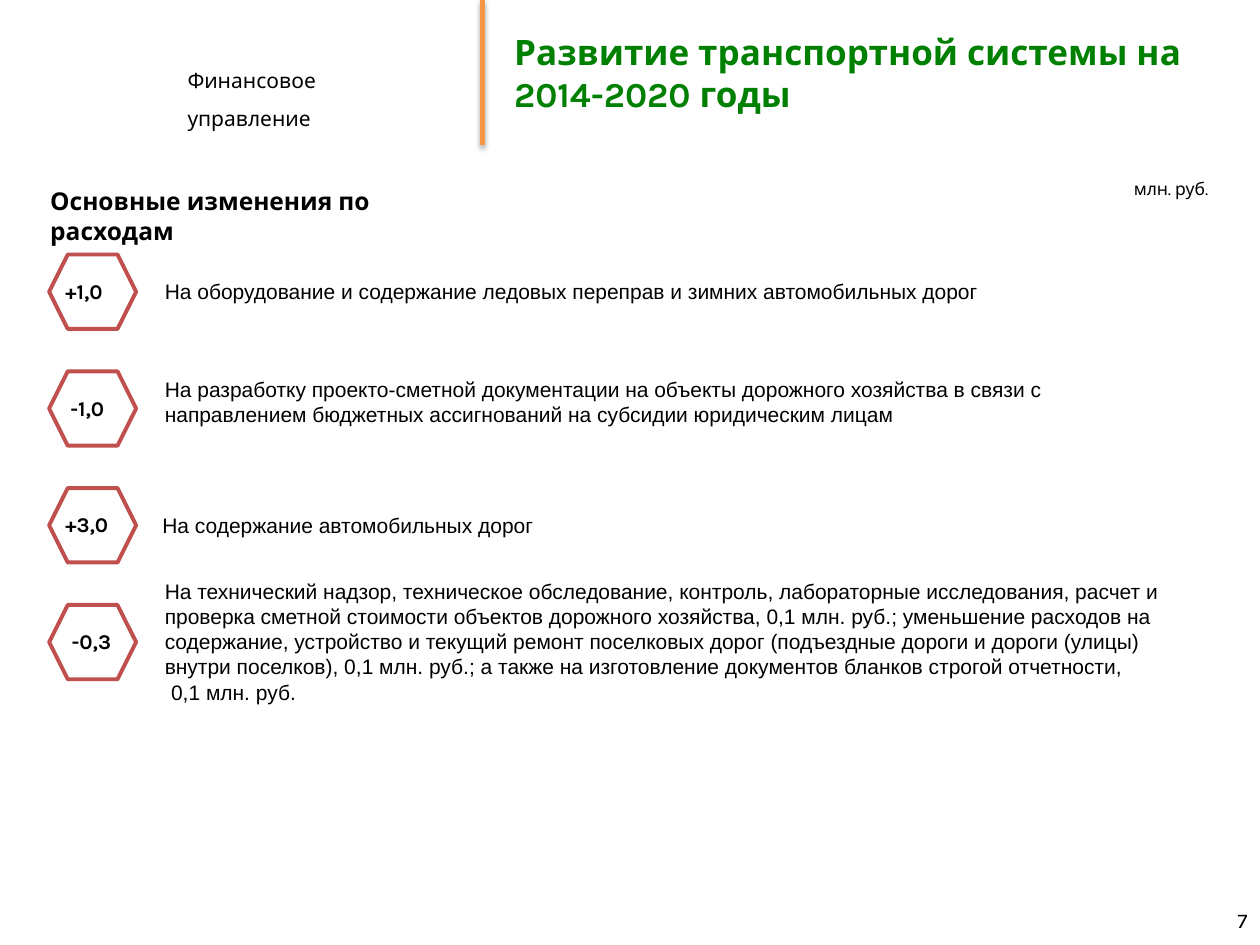
import pptx
import pptx.util
import pptx.dml.color
import pptx.enum.shapes
import pptx.enum.text
import pptx.oxml
from pptx.util import Inches, Pt

TITLE = "Развитие транспортной системы на 2014-2020 годы"
DEPARTMENT = "Финансовое управление"
HEADING = "Основные изменения по расходам"
UNIT = "млн. руб."
PAGE = "7"
CHANGES = [
    {"value": "+1,0", "value_left": 0.42, "left": 1.21, "top": 2.16, "height": 0.3,
     "text": ["На оборудование и содержание ледовых переправ и зимних автомобильных дорог"]},
    {"value": "-1,0", "value_left": 0.46, "left": 1.21, "top": 2.94, "height": 0.5,
     "text": ["На разработку проекто-сметной документации на объекты дорожного хозяйства "
              "в связи с направлением бюджетных ассигнований на субсидии юридическим лицам"]},
    {"value": "+3,0", "value_left": 0.42, "left": 1.19, "top": 4.02, "height": 0.3,
     "text": ["На содержание автомобильных дорог"]},
    {"value": "-0,3", "value_left": 0.47, "left": 1.21, "top": 4.54, "height": 1.11,
     "text": ["На технический надзор, техническое обследование, контроль, лабораторные "
              "исследования, расчет и проверка сметной стоимости объектов дорожного хозяйства, "
              "0,1 млн. руб.; уменьшение расходов на содержание, устройство и текущий ремонт "
              "поселковых дорог (подъездные дороги и дороги (улицы) внутри поселков), "
              "0,1 млн. руб.; а также на изготовление документов бланков строгой отчетности,",
              "0,1 млн. руб."]},
]

THEME = {
    "head_font": "Karla", "body_font": "Arial",
    "title": "008000", "text": "000000", "rule": "F79646", "hexagon": "C0504D",
    "title_size": 20, "heading_size": 14, "body_size": 12, "unit_size": 10,
}
ROW_TOP, ROW_STEP = 2.02, 0.927
HEX_LEFT, HEX_W, HEX_H = 0.39, 0.69, 0.59
VALUE_OFFSET = 0.14
LAST_LINE_INDENT = 0.05
SHADOW = (
    '<a:effectLst xmlns:a="http://schemas.openxmlformats.org/drawingml/2006/main">'
    '<a:outerShdw blurRad="40000" dist="23000" dir="5400000" rotWithShape="0">'
    '<a:srgbClr val="000000"><a:alpha val="35000"/></a:srgbClr>'
    '</a:outerShdw></a:effectLst>'
)


def rgb(name):
    return pptx.dml.color.RGBColor.from_string(THEME[name])


def format_text(tf, size, font="head_font", color="text", bold=False):
    for p in tf.paragraphs:
        for r in p.runs:
            r.font.name = THEME[font]
            r.font.size = Pt(THEME[size])
            r.font.bold = bold
            r.font.color.rgb = rgb(color)


def add_text(s, box, text, size, wrap=True, **style):
    tf = s.shapes.add_textbox(*map(Inches, box)).text_frame
    tf.word_wrap = wrap
    tf.text = text
    format_text(tf, size, **style)
    return tf


def add_header(s):
    tf = add_text(s, (1.39, 0.39, 2.1, 0.36), DEPARTMENT, "body_size")
    tf.paragraphs[0].line_spacing = 1.5

    rule = s.shapes.add_connector(pptx.enum.shapes.MSO_CONNECTOR.STRAIGHT,
                                  Inches(3.83), Inches(0), Inches(3.83), Inches(1.15))
    rule.line.color.rgb = rgb("rule")
    rule.line.width = Pt(3)
    rule._element.spPr.append(pptx.oxml.parse_xml(SHADOW))

    title = s.shapes.title
    title.left, title.top, title.width, title.height = map(Inches, (3.98, 0, 6.02, 1.15))
    tf = title.text_frame
    tf.text = TITLE
    tf.word_wrap = True
    tf.auto_size = pptx.enum.text.MSO_AUTO_SIZE.NONE
    tf.vertical_anchor = pptx.enum.text.MSO_ANCHOR.MIDDLE
    tf.paragraphs[0].alignment = pptx.enum.text.PP_ALIGN.LEFT
    format_text(tf, "title_size", color="title", bold=True)


def add_change(s, index, change):
    top = ROW_TOP + index * ROW_STEP
    sp = s.shapes.add_shape(pptx.enum.shapes.MSO_SHAPE.HEXAGON,
                            *map(Inches, (HEX_LEFT, top, HEX_W, HEX_H)))
    sp.shadow.inherit = False
    sp.fill.background()
    sp.line.color.rgb = rgb("hexagon")
    sp.line.width = Pt(2.25)

    add_text(s, (change["value_left"], top + VALUE_OFFSET, 0.61, 0.3),
             change["value"], "body_size", bold=True)
    tf = add_text(s, (change["left"], change["top"], 8.17, change["height"]),
                  "\n".join(change["text"]), "body_size", font="body_font")
    for p in tf.paragraphs[1:]:
        p._p.get_or_add_pPr().set("marL", str(Inches(LAST_LINE_INDENT)))


def main():
    prs = pptx.Presentation()
    prs.slide_width, prs.slide_height = Inches(10), Inches(7.5)
    s = prs.slides.add_slide(prs.slide_layouts[5])
    add_header(s)
    add_text(s, (8.9, 1.36, 0.8, 0.27), UNIT, "unit_size", wrap=False)
    add_text(s, (0.3, 1.43, 3.75, 0.34), HEADING, "heading_size", bold=True)
    for index, change in enumerate(CHANGES):
        add_change(s, index, change)
    tf = add_text(s, (7.67, 7.1, 2.33, 0.4), PAGE, "body_size")
    tf.vertical_anchor = pptx.enum.text.MSO_ANCHOR.MIDDLE
    tf.paragraphs[0].alignment = pptx.enum.text.PP_ALIGN.RIGHT
    prs.save("out.pptx")


if __name__ == "__main__":
    main()
